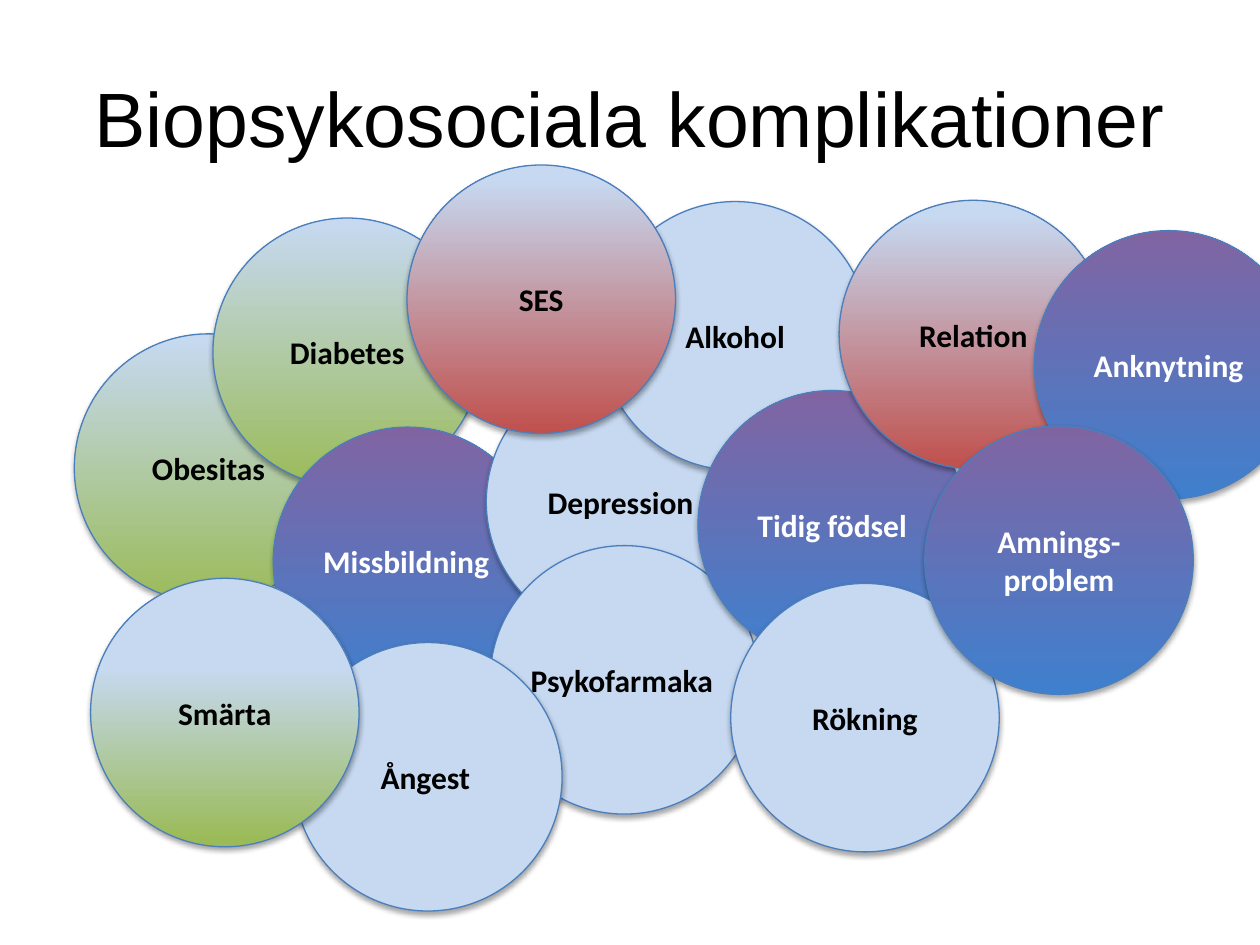
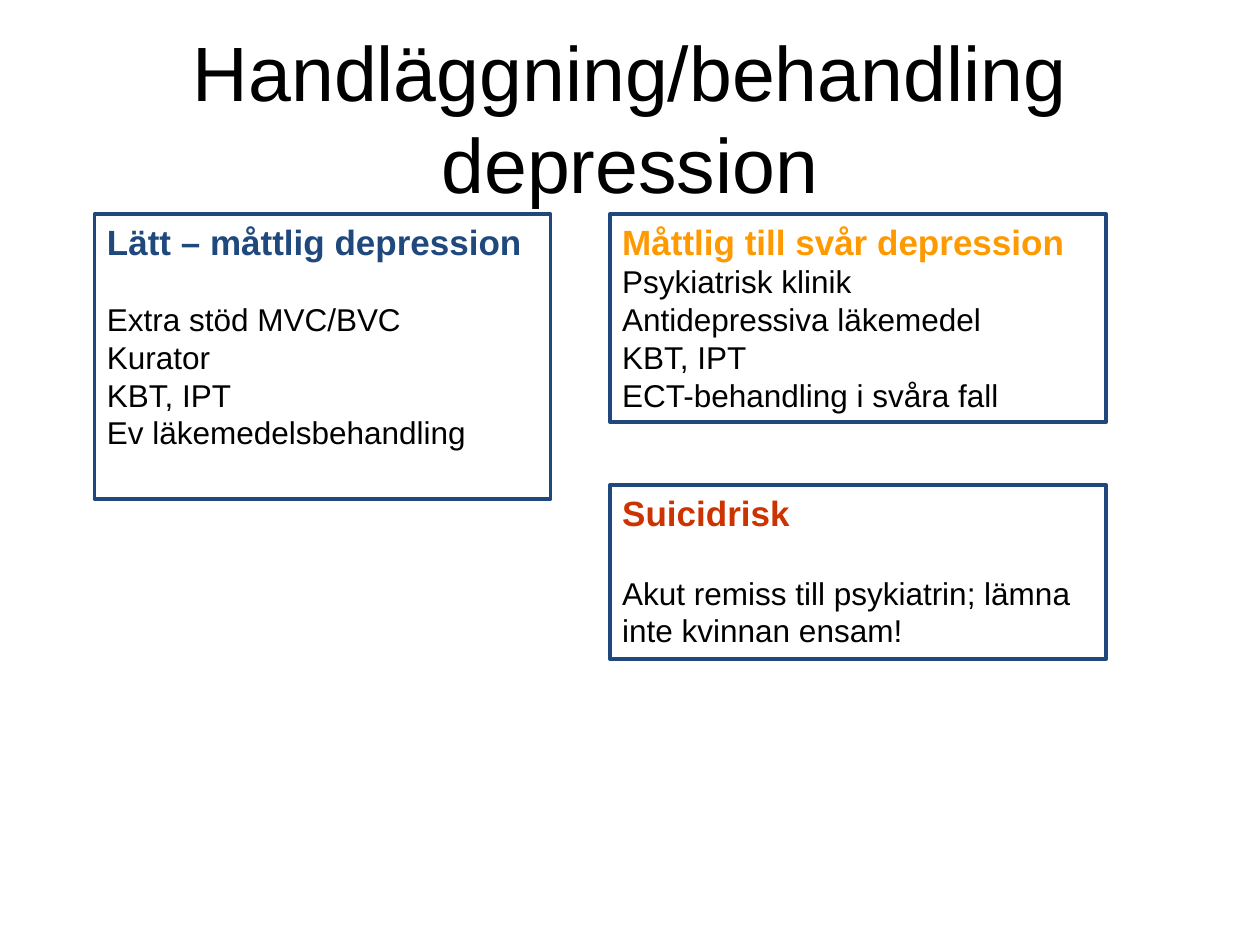
"""Build two slides on psychosocial complications and the care of depression."""
import pptx
import pptx.dml.color
import pptx.enum.shapes
import pptx.enum.text
import pptx.oxml
import pptx.oxml.ns
import pptx.util

Pt = pptx.util.Pt
Shape = pptx.enum.shapes.MSO_SHAPE
Align = pptx.enum.text.PP_ALIGN
Anchor = pptx.enum.text.MSO_ANCHOR
Fit = pptx.enum.text.MSO_AUTO_SIZE

COLORS = {
    "black": "000000", "white": "FFFFFF", "pale": "C6D9F1", "green": "9BBB59",
    "red": "C0504D", "blue": "3F80CE", "violet": "8064A2", "rim": "4B7EBC",
    "navy": "1F497D", "amber": "FF9900", "rust": "CC3300",
}
FILLS = {
    "plain": [("pale", 0)],
    "body": [("green", 0), ("pale", 0.99)],
    "pain": [("green", 0.03), ("pale", 0.67)],
    "social": [("red", 0), ("pale", 0.95)],
    "child": [("blue", 0), ("violet", 1)],
}
SIZE = 153.4
INSET = (7.2, 3.6, 7.2, 3.6)
SNUG = (0, 2.9, 2.9, 2.9)
CIRCLES = [
    ("Obesitas", 42.5, 190.8, "body", INSET),
    ("Diabetes", 121.7, 124.6, "body", INSET),
    ("Missbildning", 156.2, 244.1, "child", (5.5, 3.6, 7.2, 3.6)),
    ("Depression", 277.9, 210.2, "plain", INSET),
    ("Alkohol", 343.4, 115.2, "plain", INSET),
    ("Psykofarmaka", 280.1, 311.8, "plain", SNUG),
    ("SES", 232.6, 94.3, "social", INSET),
    ("Tidig födsel", 398.9, 223.2, "child", INSET),
    ("Relation", 479.5, 114.5, "social", INSET),
    ("Rökning", 417.6, 333.4, "plain", INSET),
    ("Anknytning", 591.1, 131.8, "child", INSET),
    ("Amnings-problem", 528.5, 243.4, "child", INSET),
    ("Ångest", 167.8, 367.2, "plain", SNUG),
    ("Smärta", 51.8, 330.5, "pain", INSET),
]
LEFT, RIGHT, TOP = 54, 348.5, 122.4
BOXES = [
    ((LEFT, TOP, 260.6, 162.7), "Lätt – måttlig depression", "navy", 21.5,
     ["Extra stöd MVC/BVC", "Kurator", "KBT, IPT", "Ev läkemedelsbehandling"]),
    ((RIGHT, TOP, 283.7, 118.8), "Måttlig till svår depression", "amber", 0,
     ["Psykiatrisk klinik", "Antidepressiva läkemedel", "KBT, IPT",
      "ECT-behandling i svåra fall"]),
    ((RIGHT, 277.2, 283.7, 99.4), "Suicidrisk", "rust", 23,
     ["Akut remiss till psykiatrin; lämna inte kvinnan ensam!"]),
]


def tint(name):
    return pptx.dml.color.RGBColor.from_string(COLORS[name])


def write(para, text, size=18, font="Arial", color="black", bold=False,
          align=Align.LEFT, before=0):
    para.alignment = align
    para.space_before = Pt(before)
    run = para.add_run()
    run.text = text
    run.font.size = Pt(size)
    run.font.name = font
    run.font.bold = bold
    run.font.color.rgb = tint(color)


class Deck:
    def __init__(self):
        self.file = pptx.Presentation()
        self.file.slide_width, self.file.slide_height = Pt(720), Pt(540)
        self.slide = None

    def start(self, text):
        self.slide = self.file.slides.add_slide(self.file.slide_layouts[5])
        title = self.slide.shapes.title
        title.left, title.top = Pt(36), Pt(21.6)
        title.width, title.height = Pt(648), Pt(90)
        frame = self.frame(title, Anchor.MIDDLE)
        write(frame.paragraphs[0], text, size=44, align=Align.CENTER)

    def frame(self, shape, anchor, inset=INSET):
        frame = shape.text_frame
        frame.word_wrap = True
        frame.auto_size = Fit.NONE
        frame.vertical_anchor = anchor
        (frame.margin_left, frame.margin_top,
         frame.margin_right, frame.margin_bottom) = map(Pt, inset)
        return frame

    def shape(self, kind, place, rim, width):
        shape = self.slide.shapes.add_shape(kind, *map(Pt, place))
        shape.shadow.inherit = False
        shape.line.color.rgb = tint(rim)
        shape.line.width = Pt(width)
        return shape

    def paint(self, shape, stops):
        fill = shape.fill
        if len(stops) == 1:
            fill.solid()
            fill.fore_color.rgb = tint(stops[0][0])
            return
        fill.gradient()
        fill.gradient_angle = 90
        for stop, (name, place) in zip(fill.gradient_stops, stops):
            stop.color.rgb = tint(name)
            stop.position = place

    def shade(self, shape):
        space = pptx.oxml.ns.nsdecls("a")
        effects = shape._element.spPr.find(pptx.oxml.ns.qn("a:effectLst"))
        effects.append(pptx.oxml.parse_xml(
            f'<a:outerShdw {space} blurRad="{Pt(3.1)}" dist="{Pt(1.8)}" '
            f'dir="5400000" rotWithShape="0"><a:srgbClr val="{COLORS["black"]}">'
            '<a:alpha val="35000"/></a:srgbClr></a:outerShdw>'))

    def circle(self, text, left, top, look, inset):
        shape = self.shape(Shape.OVAL, (left, top, SIZE, SIZE), "rim", 0.75)
        self.paint(shape, FILLS[look])
        self.shade(shape)
        frame = self.frame(shape, Anchor.MIDDLE, inset)
        write(frame.paragraphs[0], text, font="Calibri", bold=True,
              color="white" if look == "child" else "black", align=Align.CENTER)

    def box(self, place, head, color, gap, lines):
        shape = self.shape(Shape.RECTANGLE, place, "navy", 2)
        shape.fill.background()
        frame = self.frame(shape, Anchor.TOP)
        write(frame.paragraphs[0], head, size=20, color=color, bold=True)
        for index, line in enumerate(lines):
            write(frame.add_paragraph(), line, before=0 if index else gap)


def main():
    deck = Deck()
    deck.start("Biopsykosociala komplikationer")
    for circle in CIRCLES:
        deck.circle(*circle)
    deck.start("Handläggning/behandling depression")
    for box in BOXES:
        deck.box(*box)
    deck.file.save("out.pptx")


if __name__ == "__main__":
    main()
